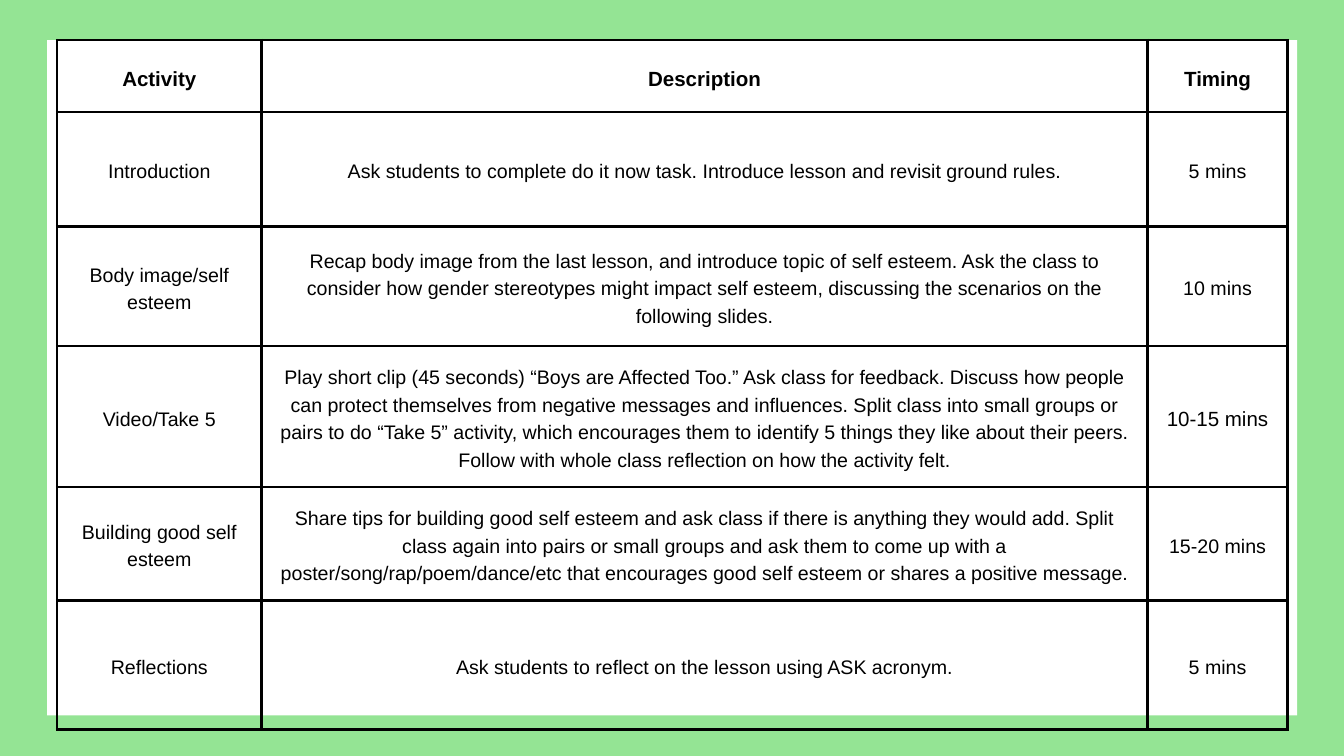
from lxml.etree import SubElement
from pptx import Presentation
from pptx.dml.color import RGBColor
from pptx.enum.shapes import MSO_SHAPE
from pptx.enum.text import MSO_ANCHOR, PP_ALIGN
from pptx.oxml.ns import qn
from pptx.util import Cm, Pt

GREEN = RGBColor(0x94, 0xE4, 0x94)
WHITE = RGBColor(0xFF, 0xFF, 0xFF)
BLACK = RGBColor(0x00, 0x00, 0x00)

FONT = "Arial"
BODY_SIZE = 21
LARGE_SIZE = 22
LINE_SPACING = 1.4
CELL_MARGIN = Cm(0.53)
BORDER_WIDTH = Pt(3)

COLUMN_WIDTHS = [7.72, 33.5, 5.28]
ROW_HEIGHTS = [2.72, 4.32, 4.52, 5.33, 4.29, 4.88]
LARGE_TEXTS = ["10-15 mins"]

LESSON_PLAN = [
    ("Activity", "Description", "Timing"),
    (
        "Introduction",
        "Ask students to complete do it now task. Introduce lesson and "
        "revisit ground rules.",
        "5 mins",
    ),
    (
        "Body image/self esteem",
        "Recap body image from the last lesson, and introduce topic of self "
        "esteem. Ask the class to consider how gender stereotypes might "
        "impact self esteem, discussing the scenarios on the following "
        "slides.",
        "10 mins",
    ),
    (
        "Video/Take 5",
        "Play short clip (45 seconds) “Boys are Affected Too.” Ask class for "
        "feedback. Discuss how people can protect themselves from negative "
        "messages and influences. Split class into small groups or pairs to "
        "do “Take 5” activity, which encourages them to identify 5 things "
        "they like about their peers. Follow with whole class reflection on "
        "how the activity felt.",
        "10-15 mins",
    ),
    (
        "Building good self esteem",
        "Share tips for building good self esteem and ask class if there is "
        "anything they would add. Split class again into pairs or small "
        "groups and ask them to come up with a "
        "poster/song/rap/poem/dance/etc that encourages good self esteem or "
        "shares a positive message.",
        "15-20 mins",
    ),
    (
        "Reflections",
        "Ask students to reflect on the lesson using ASK acronym.",
        "5 mins",
    ),
]


def set_background(slide, color):
    slide.background.fill.solid()
    slide.background.fill.fore_color.rgb = color


def add_panel(slide, left, top, width, height, color):
    panel = slide.shapes.add_shape(MSO_SHAPE.RECTANGLE, left, top, width, height)
    panel.shadow.inherit = False
    panel.fill.solid()
    panel.fill.fore_color.rgb = color
    panel.line.fill.background()


def write_text(text_frame, text, size=BODY_SIZE, bold=False, color=BLACK):
    paragraph = text_frame.paragraphs[0]
    paragraph.alignment = PP_ALIGN.CENTER
    paragraph.line_spacing = Pt(size * LINE_SPACING)
    run = paragraph.add_run()
    run.text = text
    run.font.name = FONT
    run.font.size = Pt(size)
    run.font.bold = bold
    run.font.color.rgb = color


def add_borders(cell, color, width):
    properties = cell._tc.get_or_add_tcPr()
    for side in ("L", "R", "T", "B"):
        line = SubElement(properties, qn(f"a:ln{side}"), w=str(width))
        fill = SubElement(line, qn("a:solidFill"))
        SubElement(fill, qn("a:srgbClr"), val=str(color))


def format_cell(cell):
    add_borders(cell, BLACK, BORDER_WIDTH)
    cell.fill.background()
    cell.vertical_anchor = MSO_ANCHOR.MIDDLE
    cell.margin_left = cell.margin_right = CELL_MARGIN
    cell.margin_top = cell.margin_bottom = CELL_MARGIN


def add_lesson_table(slide, left, top):
    table = slide.shapes.add_table(
        len(ROW_HEIGHTS), len(COLUMN_WIDTHS), left, top,
        Cm(sum(COLUMN_WIDTHS)), Cm(sum(ROW_HEIGHTS)),
    ).table
    table.first_row = False
    table.horz_banding = False
    for column, width in zip(table.columns, COLUMN_WIDTHS):
        column.width = Cm(width)
    for row_index, (row, height) in enumerate(zip(table.rows, ROW_HEIGHTS)):
        row.height = Cm(height)
        is_header = row_index == 0
        for cell, text in zip(row.cells, LESSON_PLAN[row_index]):
            format_cell(cell)
            is_large = is_header or text in LARGE_TEXTS
            size = LARGE_SIZE if is_large else BODY_SIZE
            write_text(cell.text_frame, text, size=size, bold=is_header)


def main():
    presentation = Presentation()
    presentation.slide_width = Cm(50.8)
    presentation.slide_height = Cm(28.58)
    slide = presentation.slides.add_slide(presentation.slide_layouts[6])
    set_background(slide, GREEN)
    add_panel(slide, Cm(1.78), Cm(1.52), Cm(47.25), Cm(25.53), WHITE)
    add_lesson_table(slide, Cm(2.16), Cm(1.52))
    presentation.save("out.pptx")


if __name__ == "__main__":
    main()
